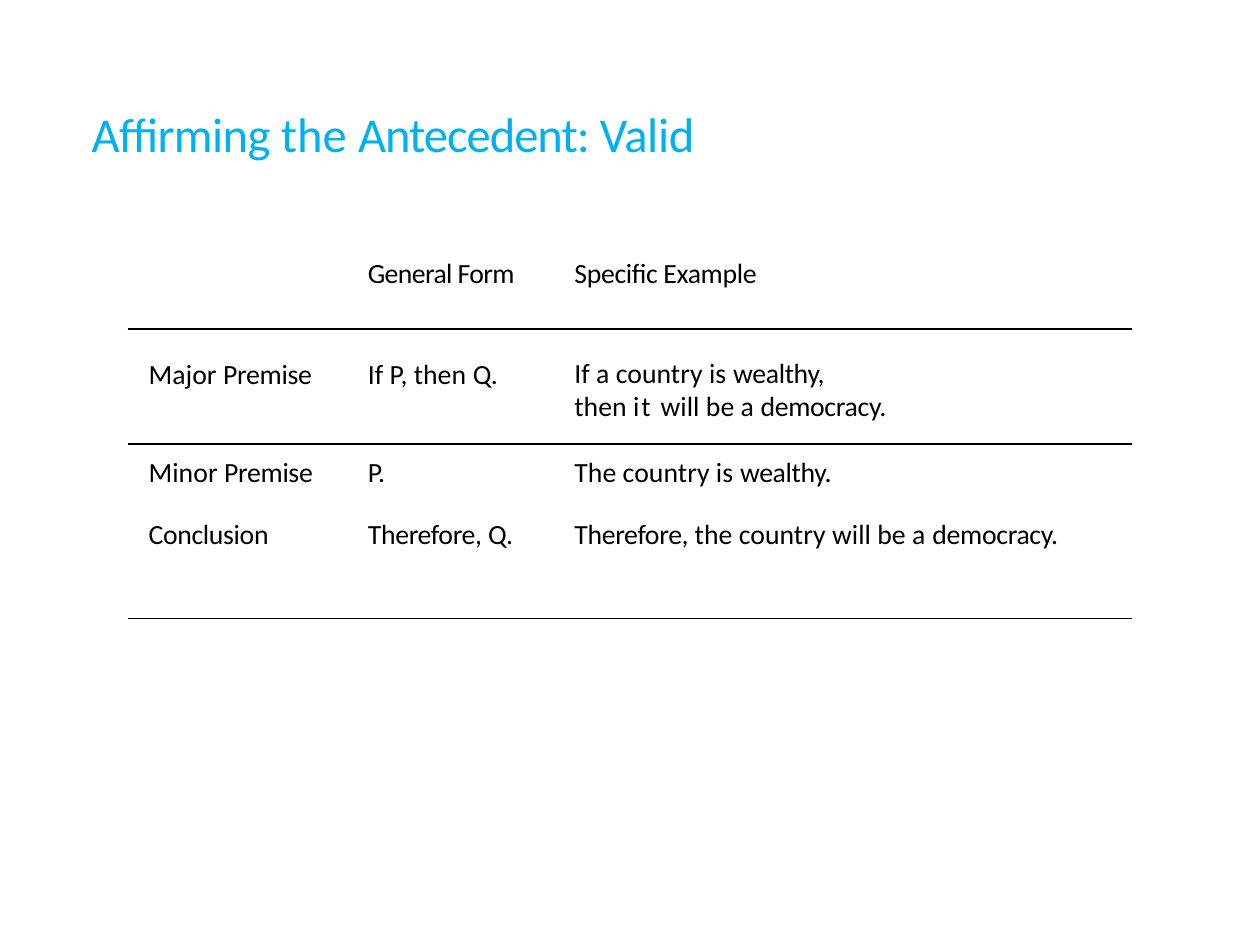
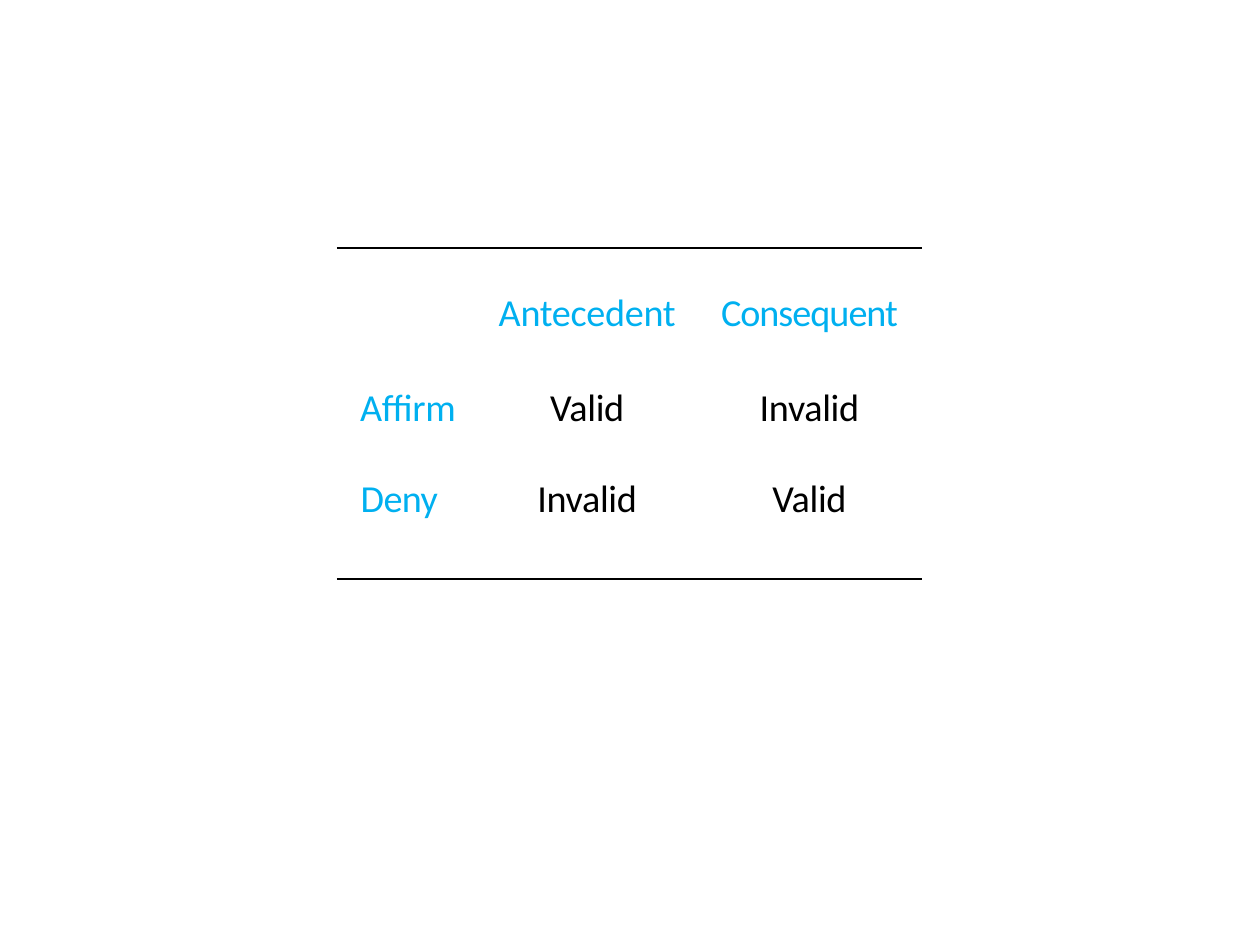
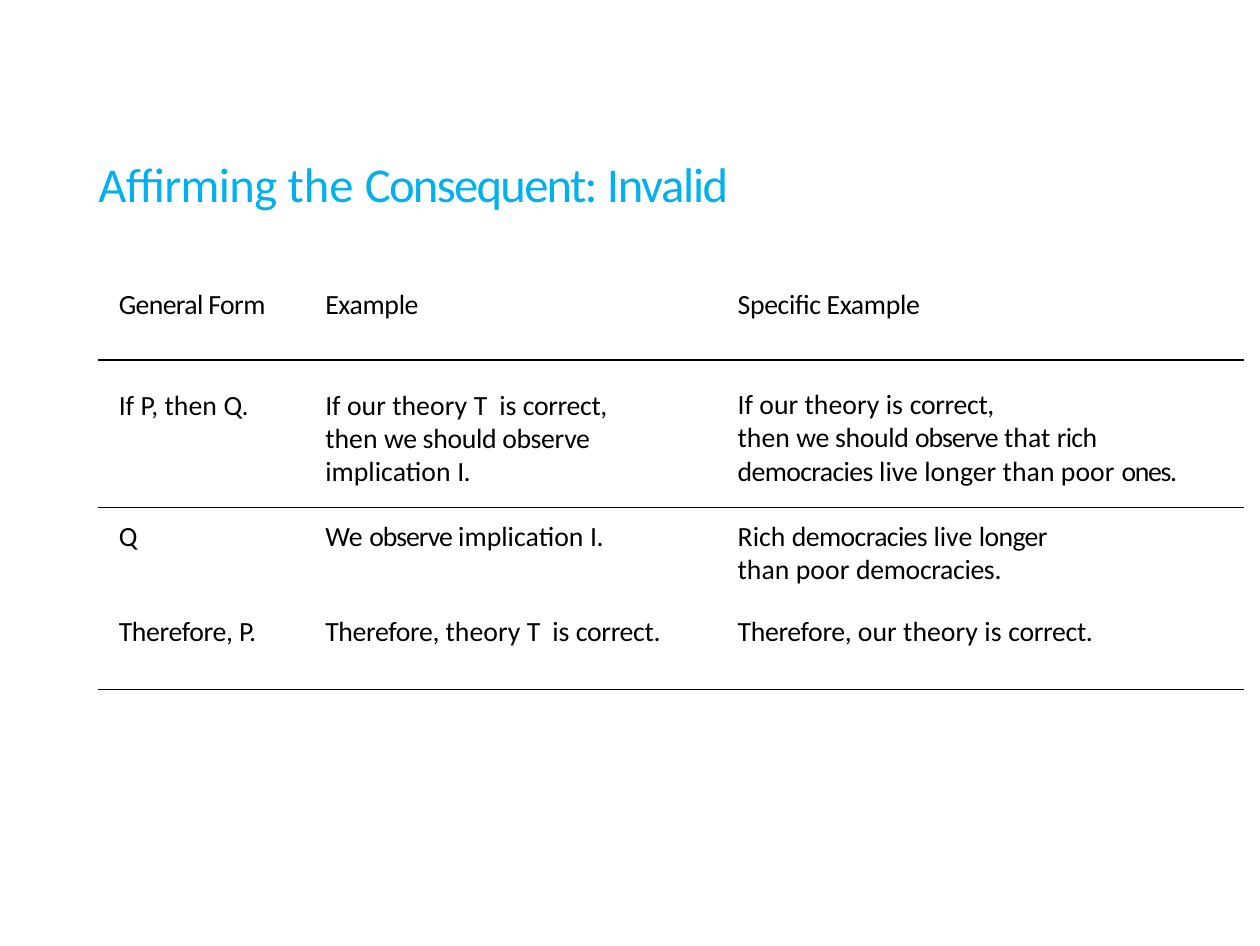
from dataclasses import dataclass

from lxml import etree
from pptx import Presentation
from pptx.dml.color import RGBColor
from pptx.enum import shapes, text
from pptx.oxml.ns import qn
from pptx.util import Pt


@dataclass(frozen=True)
class Theme:
    font: str = "Calibri"
    accent: RGBColor = RGBColor(0x00, 0xB0, 0xF0)
    ink: RGBColor = RGBColor(0, 0, 0)
    title_size: float = 14
    matrix_size: float = 11
    body_size: float = 8
    rule: float = 0.4
    border: float = 0.5
    plain_table: str = "{2D5ABB26-0587-4C30-8999-92F81FD0307C}"


THEME = Theme()
WIDTH, HEIGHT = 363, 272.5


def apply(target, values):
    for name, value in values.items():
        setattr(target, name, value)


# Text: each line is a dict of wording and its letter spacing in points
def write_line(paragraph, line, size, color, gap=0, leading=None,
               indent=0, align=text.PP_ALIGN.LEFT):
    apply(paragraph, {"alignment": align, "space_before": Pt(gap),
                      "line_spacing": Pt(leading) if leading else None})
    paragraph._p.get_or_add_pPr().set("marL", str(Pt(indent)))
    for wording, spacing in line.items():
        run = paragraph.add_run()
        run.text = wording
        apply(run.font, {"name": THEME.font, "size": Pt(size)})
        run.font.color.rgb = color
        run._r.get_or_add_rPr().set("spc", str(round(spacing * 100)))


def add_title(slide, left, top, width, line):
    box = slide.shapes.add_textbox(Pt(left), Pt(top), Pt(width), Pt(18))
    frame = box.text_frame
    apply(frame, {"margin_left": 0, "margin_right": 0, "margin_bottom": 0,
                  "margin_top": Pt(1.4), "word_wrap": True,
                  "auto_size": text.MSO_AUTO_SIZE.SHAPE_TO_FIT_TEXT})
    write_line(frame.paragraphs[0], line, THEME.title_size, THEME.accent,
               gap=1.4, indent=0.9)


def add_rule(slide, left, top, width):
    line = slide.shapes.add_connector(
        shapes.MSO_CONNECTOR.STRAIGHT, Pt(left), Pt(top), Pt(left + width), Pt(top))
    line.line.color.rgb = THEME.ink
    line.line.width = Pt(THEME.rule)
    etree.SubElement(line._element.spPr, qn("a:effectLst"))


# Tables
def add_border(cell, side):
    border = etree.SubElement(cell._tc.get_or_add_tcPr(), qn("a:" + side),
                              w=str(Pt(THEME.border)))
    fill = etree.SubElement(border, qn("a:solidFill"))
    etree.SubElement(fill, qn("a:srgbClr"), val=str(THEME.ink))


def add_plain_table(slide, left, top, widths, heights):
    frame = slide.shapes.add_table(len(heights), len(widths), Pt(left), Pt(top),
                                   Pt(sum(widths)), Pt(sum(heights)))
    table = frame.table
    apply(table, {"first_row": False, "horz_banding": False})
    table._tbl.tblPr.find(qn("a:tableStyleId")).text = THEME.plain_table
    for column, width in zip(table.columns, widths):
        column.width = Pt(width)
    for row, height in zip(table.rows, heights):
        row.height = Pt(height)
    return table


def fill_cell(cell, lines, size, color, gap=0, right=0, **style):
    """Write the lines; the gap is both the top inset and the space before."""
    apply(cell, {"margin_left": 0, "margin_right": Pt(right),
                 "margin_top": Pt(gap), "margin_bottom": 0})
    cell.fill.background()
    frame = cell.text_frame
    if not lines:
        end = frame.paragraphs[0]._p.get_or_add_endParaRPr()
        end.set("sz", str(round(size * 100)))
    for number, line in enumerate(lines):
        paragraph = frame.add_paragraph() if number else frame.paragraphs[0]
        write_line(paragraph, line, size, color, gap=0 if number else gap, **style)


def entry(*lines, **overrides):
    return lines, overrides


def add_argument(slide, left, top, widths, heights, rows, rule_top):
    """Header, major premise, minor premise and conclusion, with rules."""
    row_styles = ({"leading": 7.7}, {"gap": 8.2}, {"gap": 3.5},
                  {"gap": 3.5, "leading": 9})
    borders = {0: "lnB", 1: "lnT"}
    table = add_plain_table(slide, left, top, widths, heights)
    for r, (row, row_style) in enumerate(zip(rows, row_styles)):
        for c, (lines, overrides) in enumerate(row):
            cell = table.cell(r, c)
            if r in borders:
                add_border(cell, borders[r])
            style = {"indent": 6, **row_style, **overrides}
            fill_cell(cell, lines, THEME.body_size, THEME.ink, **style)
    add_rule(slide, left, rule_top, sum(widths))


def add_matrix(slide, left, top, widths, heights, rows):
    """Headings in the first row and column, verdicts in the rest."""
    row_styles = ({"leading": 10.5}, {"gap": 5.3}, {"gap": 5.3, "leading": 12.8})
    table = add_plain_table(slide, left, top, widths, heights)
    for r, (row, row_style) in enumerate(zip(rows, row_styles)):
        for c, (lines, overrides) in enumerate(row):
            color = THEME.ink if r and c else THEME.accent
            style = {"indent": 3.5 if c == 2 else 0, **row_style, **overrides}
            fill_cell(table.cell(r, c), lines, THEME.matrix_size, color,
                      align=text.PP_ALIGN.CENTER, **style)


# Slides
GENERAL = entry({"General Form": -0.2})
SPECIFIC = entry({"Specific Example": -0.1})
IF_THEN = entry({"If P, then ": 0, "Q.": -0.2})


def valid_slide(slide):
    add_title(slide, 25.5, 28.4, 190,
              {"Affirming ": -0.2, "the ": 0, "Antecedent: ": -0.3, "Valid": -0.1})
    rows = (
        (entry(), GENERAL, SPECIFIC),
        (entry({"Major ": 0, "Premise": -0.1}),
         IF_THEN,
         entry({"If a country is ": 0, "wealthy,": -0.1},
               {"then ": 0, "it ": 0.5, "will be a ": 0, "democracy.": -0.1},
               leading=9.6)),
        (entry({"Minor ": 0, "Premise": -0.1}),
         entry({"P.": -0.2}),
         entry({"The country is ": 0, "wealthy.": -0.1})),
        (entry({"Conclusion": -0.1}),
         entry({"Therefore, ": -0.1, "Q.": -0.2}),
         entry({"Therefore, ": -0.1, "the country will be a ": 0,
                "democracy.": -0.1})),
    )
    add_argument(slide, 36.8, 76.1, (63.2, 59.5, 166.6), (18.7, 33.1, 18.7, 13.7),
                 rows, 178.2)


def summary_slide(slide):
    rows = (
        (entry(), entry({"Antecedent": -0.1}), entry({"Consequent": -0.3})),
        (entry({"Affirm": -0.1}, right=3.2),
         entry({"Valid": -0.1}), entry({"Invalid": -0.1})),
        (entry({"Deny": -0.2}, right=8.2),
         entry({"Invalid": -0.1}), entry({"Valid": -0.1})),
    )
    top_rule, bottom_rule = (71.5, 166.8)
    add_rule(slide, 97.1, top_rule, 168.5)
    add_matrix(slide, 100.8, 86.6, (36.7, 63.4, 61.2), (18.9, 27.2, 18.7), rows)
    add_rule(slide, 97.1, bottom_rule, 168.5)


def invalid_slide(slide):
    add_title(slide, 27.5, 42.8, 200,
              {"Affirming ": -0.2, "the ": 0, "Consequent: ": -0.5, "Invalid": -0.4})
    rows = (
        (GENERAL, entry({"Example": -0.1}), SPECIFIC),
        (IF_THEN,
         entry({"If our theory ": 0, "T ": 0.8, "is ": 0, "correct, ": -0.1,
                "then ": 0, "we should observe ": -0.1, "implication ": 0,
                "I.": -0.2}, gap=8.7, leading=9.5, right=22),
         entry({"If our theory is ": 0, "correct,": -0.1},
               {"then ": 0, "we should ": -0.1, "observe ": -0.3, "that ": 0,
                "rich democracies ": -0.2, "live longer than poor ": 0,
                "ones.": -0.4}, leading=9.6, right=8)),
        (entry({"Q": -0.5}),
         entry({"We ": 0, "observe ": -0.3, "implication ": 0, "I.": -0.2}),
         entry({"Rich ": 0, "democracies ": -0.2, "live ": 0, "longer ": -0.2,
                "than poor ": 0, "democracies.": -0.1},
               gap=3.9, leading=9.5, right=48)),
        (entry({"Therefore, ": -0.1, "P.": -0.2}),
         entry({"Therefore, ": -0.1, "theory ": 0, "T ": 0.8, "is ": 0,
                "correct.": -0.1}),
         entry({"Therefore, ": -0.1, "our theory is ": 0, "correct.": -0.1})),
    )
    add_argument(slide, 28.2, 85, (59.5, 118.8, 152), (18.7, 42.5, 28.2, 13.7),
                 rows, 198.7)


def main():
    presentation = Presentation()
    apply(presentation, {"slide_width": Pt(WIDTH), "slide_height": Pt(HEIGHT)})
    for build in (valid_slide, summary_slide, invalid_slide):
        build(presentation.slides.add_slide(presentation.slide_layouts[6]))
    presentation.save("out.pptx")


if __name__ == "__main__":
    main()
